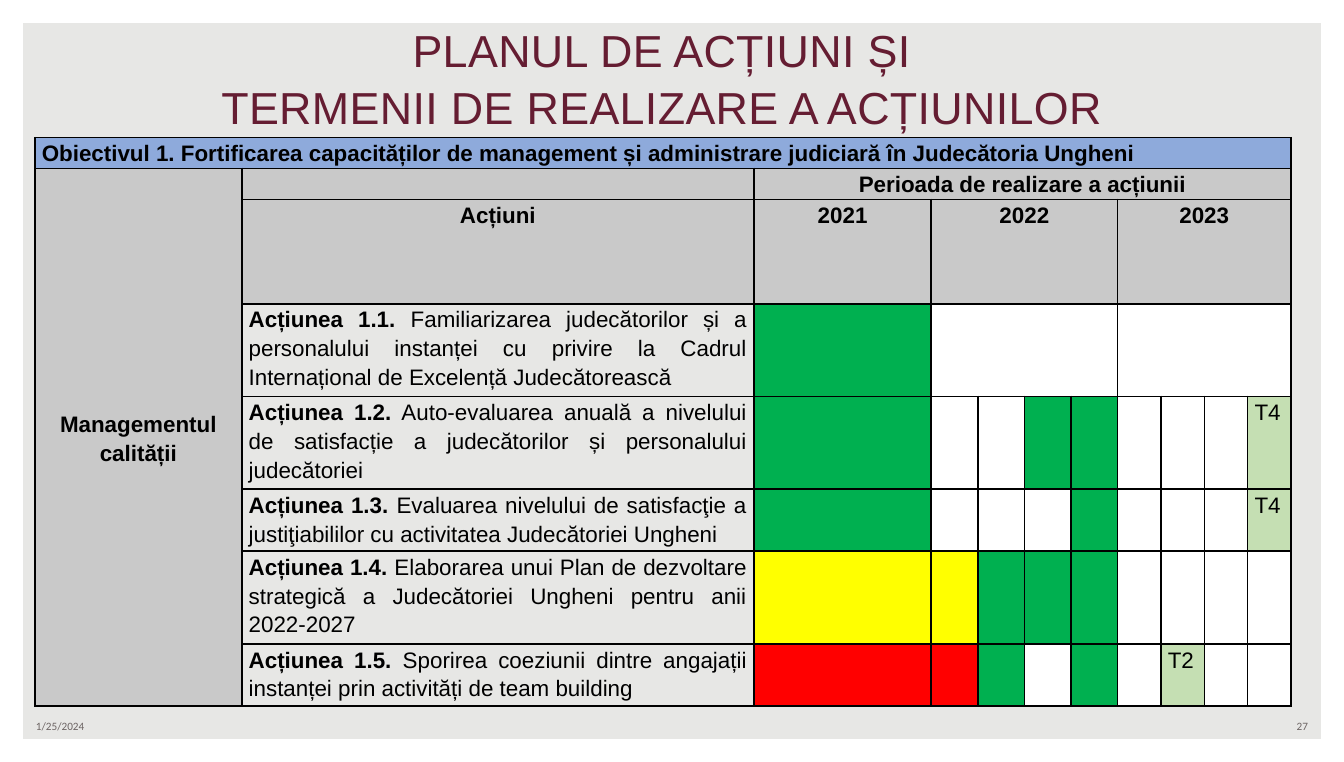
from dataclasses import dataclass

from lxml.etree import SubElement
from pptx import Presentation
from pptx.dml.color import RGBColor as Color
from pptx.enum.shapes import MSO_SHAPE as Shape
from pptx.enum.text import MSO_ANCHOR as Anchor, PP_ALIGN as Align
from pptx.oxml.ns import qn
from pptx.util import Cm, Pt


@dataclass(frozen=True)
class Theme:
    background: str = "E7E7E5"
    frame: str = "FFFFFF"
    title: str = "651D32"
    footer: str = "6C6463"
    ink: str = "000000"
    objective: str = "8EAADB"
    header: str = "C9C9C9"
    done: str = "00B050"
    late: str = "FFFF00"
    missed: str = "FF0000"
    planned: str = "C5DFB3"
    free: str = "FFFFFF"
    title_size: float = 24
    table_size: float = 12
    footer_size: float = 6
    font: str = "Arial"
    footer_font: str = "Calibri"


THEME = Theme()
STATUS = {"G": THEME.done, "Y": THEME.late, "R": THEME.missed,
          "P": THEME.planned, "-": THEME.free}

COLUMNS = [3.91, 9.68, 3.35] + [0.88] * 4 + [0.82] * 4
ROWS = [0.55, 0.55, 1.97, 1.75, 1.75, 1.15, 1.75, 1.15]
YEARS = {2: "2021", 3: "2022", 7: "2023"}
FIRST_ACTION_ROW = 3
FIRST_PERIOD_COLUMN = 2

# Action number, description, status of 2021 and of each quarter, planned quarter
ACTIONS = [
    ("1.1", "Familiarizarea judecătorilor și a personalului instanței cu privire "
            "la Cadrul Internațional de Excelență Judecătorească", "G--------", ""),
    ("1.2", "Auto-evaluarea anuală a nivelului de satisfacție a judecătorilor "
            "și personalului judecătoriei", "G--GG---P", "T4"),
    ("1.3", "Evaluarea nivelului de satisfacţie a justiţiabililor cu activitatea "
            "Judecătoriei Ungheni", "G---G---P", "T4"),
    ("1.4", "Elaborarea unui Plan de dezvoltare strategică a Judecătoriei Ungheni "
            "pentru anii 2022-2027", "YYGGG----", ""),
    ("1.5", "Sporirea coeziunii dintre angajații instanței prin activități "
            "de team building", "RRG-G-P--", "T2"),
]
# First row, first column, last row, last column
MERGES = [(0, 0, 0, 10), (1, 0, 7, 0), (1, 2, 1, 10), (2, 3, 2, 6),
          (2, 7, 2, 10), (3, 3, 3, 6), (3, 7, 3, 10)]


def write_text(frame, *spans, size=THEME.table_size, font=THEME.font, color=THEME.ink,
               align=Align.LEFT, anchor=Anchor.TOP, spacing=1.0, tracking=None):
    """Write (text, bold) spans into one paragraph; a newline is a line break."""
    frame.word_wrap = True
    frame.vertical_anchor = anchor
    para = frame.paragraphs[0]
    para.alignment = align
    para.line_spacing = spacing
    for text, bold in spans:
        for number, line in enumerate(text.split("\n")):
            if number:
                para.add_line_break()
            span = para.add_run()
            span.text = line
            span.font.size = Pt(size)
            span.font.name = font
            span.font.bold = bold
            span.font.color.rgb = Color.from_string(color)
            if tracking is not None:
                span.font._element.set("spc", str(round(tracking * 100)))


def add_text_box(page, left, top, width, height, text, **text_format):
    box = page.shapes.add_textbox(Cm(left), Cm(top), Cm(width), Cm(height))
    write_text(box.text_frame, (text, False), **text_format)
    return box


def add_frame(page, width, height):
    frame = page.shapes.add_shape(Shape.FRAME, 0, 0, width, height)
    frame.adjustments[0] = 0.03
    frame.shadow.inherit = False
    frame.fill.solid()
    frame.fill.fore_color.rgb = Color.from_string(THEME.frame)
    frame.line.fill.background()


def add_title(page):
    title = add_text_box(page, 1.9, 0.33, 21.6, 2.31,
                         "PLANUL DE ACȚIUNI ȘI\nTERMENII DE REALIZARE A ACȚIUNILOR",
                         size=THEME.title_size, color=THEME.title, align=Align.CENTER,
                         anchor=Anchor.BOTTOM, spacing=1.05, tracking=0.2)
    title.text_frame.margin_left = 0
    title.text_frame.margin_right = Cm(0.38)


def add_footer(page):
    for left, text, align in ((0.43, "1/25/2024", Align.LEFT), (19.05, "27", Align.RIGHT)):
        add_text_box(page, left, 13.46, 5.92, 0.51, text, size=THEME.footer_size,
                     font=THEME.footer_font, color=THEME.footer, align=align,
                     anchor=Anchor.MIDDLE)


def prepare_cell(cell):
    """Give a cell its insets, border and a small empty line, with no fill."""
    cell.margin_left = cell.margin_right = Cm(0.13)
    cell.margin_top = cell.margin_bottom = 0
    properties = cell._tc.get_or_add_tcPr()
    for side in ("a:lnL", "a:lnR", "a:lnT", "a:lnB"):
        line = SubElement(properties, qn(side), w=str(Pt(1)))
        fill = SubElement(line, qn("a:solidFill"))
        SubElement(fill, qn("a:srgbClr"), val=THEME.ink)
    cell.fill.background()
    para = cell.text_frame.paragraphs[0]
    SubElement(para._p, qn("a:endParaRPr"), sz=str(round(THEME.table_size * 100)))


def fill_cell(cell, color=None, *spans, align=Align.JUSTIFY, anchor=Anchor.TOP):
    if color:
        cell.fill.solid()
        cell.fill.fore_color.rgb = Color.from_string(color)
    if spans:
        write_text(cell.text_frame, *spans, align=align, spacing=1.15)
        cell.vertical_anchor = anchor


def fill_headers(table):
    fill_cell(table.cell(0, 0), THEME.objective,
              ("Obiectivul 1. Fortificarea capacităților de management și "
               "administrare judiciară în Judecătoria Ungheni", True))
    fill_cell(table.cell(1, 0), THEME.header, ("Managementul calității", True),
              align=Align.CENTER, anchor=Anchor.MIDDLE)
    fill_cell(table.cell(1, 1), THEME.header)
    headings = {(1, 2): "Perioada de realizare a acțiunii", (2, 1): "Acțiuni"}
    headings.update({(2, column): year for column, year in YEARS.items()})
    for (row, column), text in headings.items():
        fill_cell(table.cell(row, column), THEME.header, (text, True), align=Align.CENTER)


def fill_actions(table):
    for row, (number, text, periods, quarter) in enumerate(ACTIONS, FIRST_ACTION_ROW):
        fill_cell(table.cell(row, 1), None,
                  (f"Acțiunea {number}.", True), (f" {text}", False))
        for column, status in enumerate(periods, FIRST_PERIOD_COLUMN):
            label = [(quarter, False)] if status == "P" else []
            fill_cell(table.cell(row, column), STATUS[status], *label)


def add_plan_table(page):
    table = page.shapes.add_table(len(ROWS), len(COLUMNS), Cm(0.66), Cm(2.6),
                                  Cm(sum(COLUMNS)), Cm(sum(ROWS))).table
    table.first_row = table.horz_banding = False
    for column, width in zip(table.columns, COLUMNS):
        column.width = Cm(width)
    for row, height in zip(table.rows, ROWS):
        row.height = Cm(height)
    for cell in table.iter_cells():
        prepare_cell(cell)
    for top, left, bottom, right in MERGES:
        table.cell(top, left).merge(table.cell(bottom, right))
    fill_headers(table)
    fill_actions(table)


def main():
    deck = Presentation()
    deck.slide_width, deck.slide_height = Cm(25.4), Cm(14.4)
    page = deck.slides.add_slide(deck.slide_layouts[6])
    page.background.fill.solid()
    page.background.fill.fore_color.rgb = Color.from_string(THEME.background)
    add_frame(page, deck.slide_width, deck.slide_height)
    add_footer(page)
    add_title(page)
    add_plan_table(page)
    deck.save("out.pptx")


if __name__ == "__main__":
    main()
